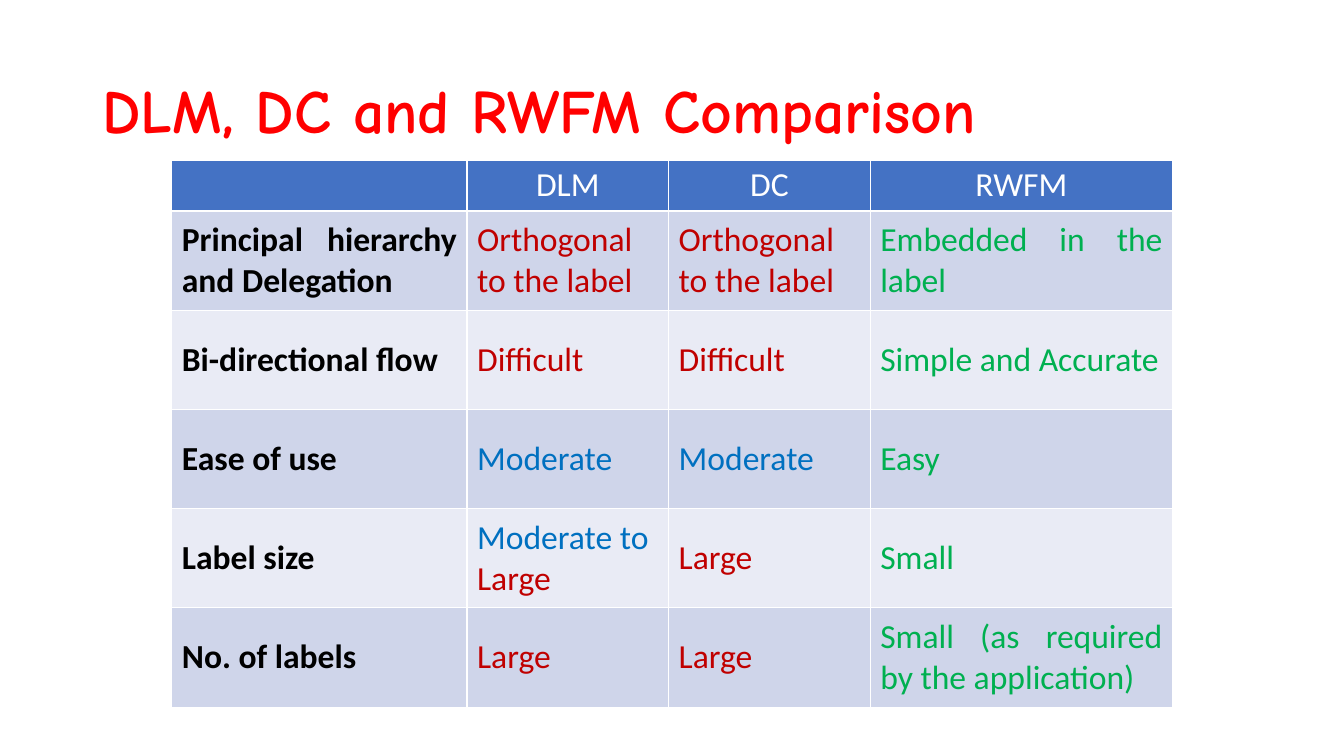
"""Build a slide with a table that compares the DLM, DC and RWFM label models."""
from pptx import Presentation
from pptx.dml.color import RGBColor
from pptx.enum.text import MSO_ANCHOR, PP_ALIGN
from pptx.util import Cm, Pt

THEME = {
    "title": {"name": "Comic Neue", "size": Pt(44), "bold": True},
    "header": {"name": "Calibri", "size": Pt(24), "bold": False},
    "label": {"name": "Calibri", "size": Pt(24), "bold": True},
    "body": {"name": "Calibri", "size": Pt(24), "bold": False},
    "red": "FF0000", "white": "FFFFFF", "black": "000000",
    "poor": "C00000", "fair": "0070C0", "good": "00B050",
    "header_fill": "4472C4", "bands": ("E9EBF5", "CFD5EA"),
}
ROWS = [
    ["", "DLM", "DC", "RWFM"],
    ["Principal hierarchy and Delegation", "Orthogonal to the label",
     "Orthogonal to the label", "Embedded in the label"],
    ["Bi-directional flow", "Difficult", "Difficult", "Simple and Accurate"],
    ["Ease of use", "Moderate", "Moderate", "Easy"],
    ["Label size", "Moderate to |Large", "Large", "Small"],
    ["No. of labels", "Large", "Large", "Small (as required by the application)"],
]
COLUMN_WIDTHS = (7.44, 5.08, 5.08, 7.62)
HEADER_HEIGHT, ROW_HEIGHT = 1.27, 2.5


def add_span(para, text, style, colour):
    """Append text to a paragraph in one of the theme's styles and colours."""
    span = para.add_run()
    span.text = text
    for name, value in THEME[style].items():
        setattr(span.font, name, value)
    span.font.color.rgb = RGBColor.from_string(THEME[colour])


deck = Presentation()
deck.slide_width, deck.slide_height = Cm(33.87), Cm(19.05)
page = deck.slides.add_slide(deck.slide_layouts[5])

title = page.shapes.title
placement = {"left": Cm(2.33), "top": Cm(1.01), "width": Cm(29.21), "height": Cm(3.68)}
for name, value in placement.items():
    setattr(title, name, value)
title.text_frame.vertical_anchor = MSO_ANCHOR.MIDDLE
para = title.text_frame.paragraphs[0]
para.alignment = PP_ALIGN.LEFT
para.line_spacing = 0.9
add_span(para, "DLM, DC and RWFM Comparison", "title", "red")

table_height = HEADER_HEIGHT + ROW_HEIGHT * (len(ROWS) - 1)
table = page.shapes.add_table(
    len(ROWS), len(COLUMN_WIDTHS), Cm(4.33), Cm(4.03),
    Cm(sum(COLUMN_WIDTHS)), Cm(table_height)).table
for column, width in zip(table.columns, COLUMN_WIDTHS):
    column.width = Cm(width)

for row_index, texts in enumerate(ROWS):
    is_header = row_index == 0
    table.rows[row_index].height = Cm(HEADER_HEIGHT if is_header else ROW_HEIGHT)
    fill = THEME["header_fill"] if is_header else THEME["bands"][row_index % 2]
    for column_index, text in enumerate(texts):
        cell = table.cell(row_index, column_index)
        cell.fill.solid()
        cell.fill.fore_color.rgb = RGBColor.from_string(fill)
        cell.vertical_anchor = MSO_ANCHOR.TOP if is_header else MSO_ANCHOR.MIDDLE
        para = cell.text_frame.paragraphs[0]
        parts = text.split("|")
        if is_header:
            para.alignment = PP_ALIGN.CENTER
        else:
            para.alignment = PP_ALIGN.JUSTIFY if len(parts) == 1 else PP_ALIGN.LEFT
        for part in filter(None, parts):
            if is_header:
                style, colour = "header", "white"
            elif column_index == 0:
                style, colour = "label", "black"
            elif column_index == 3:
                style, colour = "body", "good"
            else:
                style, colour = "body", "fair" if part.startswith("Moderate") else "poor"
            add_span(para, part, style, colour)

deck.save("out.pptx")
